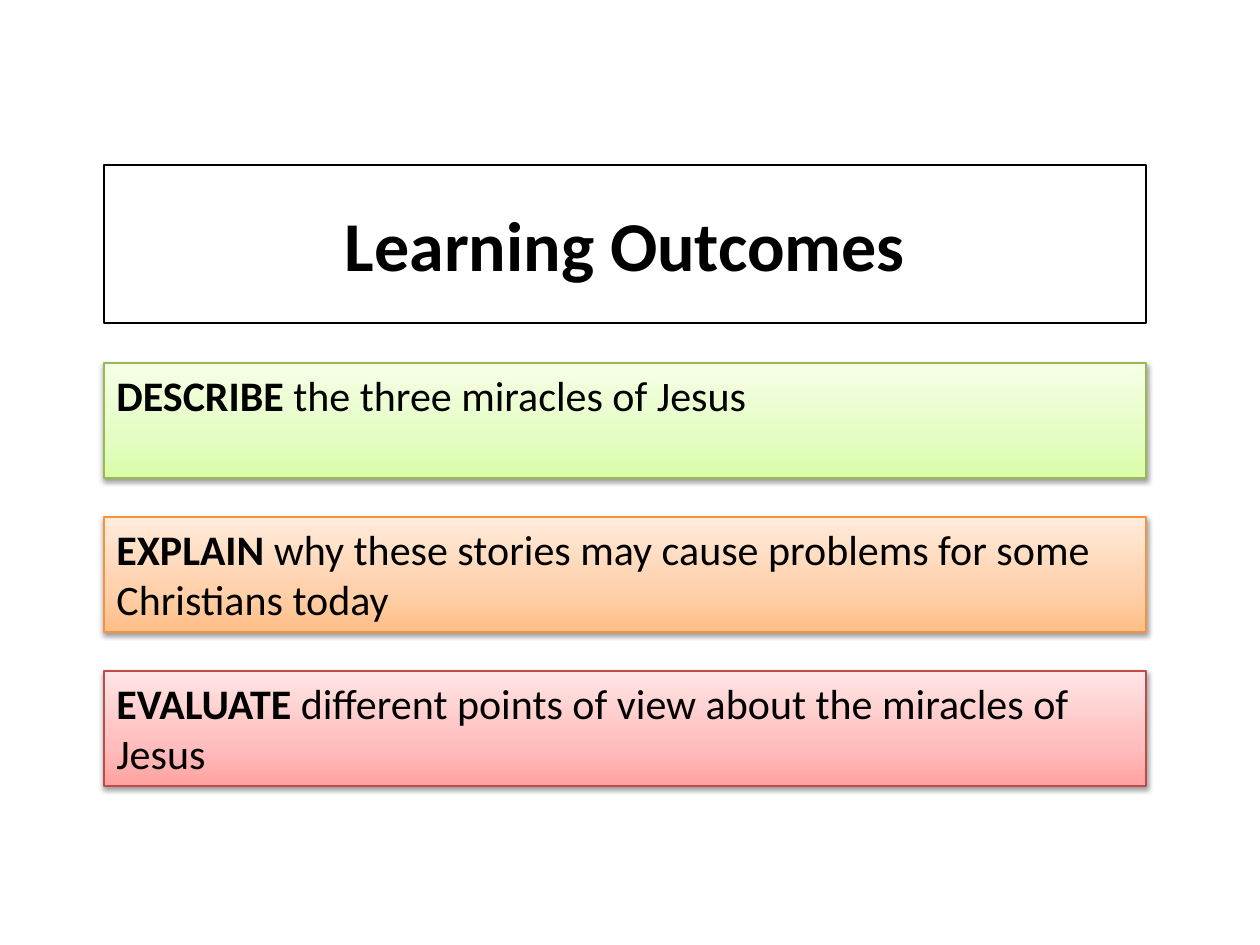
from pptx import Presentation
from pptx.dml.color import RGBColor
from pptx.enum.shapes import MSO_SHAPE as SHAPE
from pptx.enum.text import MSO_ANCHOR as ANCHOR, MSO_AUTO_SIZE as AUTO, PP_ALIGN as ALIGN
from pptx.oxml import parse_xml
from pptx.oxml.ns import nsdecls, qn
from pptx.util import Pt

PX = 914400 // 126
THEME = {
    "font": "Calibri", "title_size": 40, "body_size": 24,
    "text": "000000", "paper": "FFFFFF", "line": 0.75,
    # Border, then gradient stops from bottom to top
    "green": ("98B954", ("DAFDA7", "E4FDC2", "F5FFE6")),
    "orange": ("F69240", ("FFBE86", "FFD0AA", "FFEBDB")),
    "red": ("BE4B48", ("FFA2A1", "FFBEBD", "FFE5E5")),
}
LEFT, WIDTH = 104, 1042
TITLE_TOP, TITLE_HEIGHT = 165, 158
BOX_TOP, BOX_HEIGHT, BOX_STEP = 363, 115, 154
OUTCOMES = [
    ("green", "DESCRIBE ", "the three miracles of Jesus"),
    ("orange", "EXPLAIN ", "why these stories may cause problems for some Christians today"),
    ("red", "EVALUATE ", "different points of view about the miracles of Jesus"),
]


def add_box(top, height, border):
    s = slide.shapes.add_shape(SHAPE.RECTANGLE, LEFT * PX, top * PX, WIDTH * PX, height * PX)
    s.shadow.inherit = False
    s.fill.solid()
    s.fill.fore_color.rgb = RGBColor.from_string(THEME["paper"])
    s.line.color.rgb = RGBColor.from_string(border)
    s.line.width = Pt(THEME["line"])
    s.text_frame.word_wrap = True
    return s


def add_run(p, text, size, bold):
    r = p.add_run()
    r.text = text
    r.font.name = THEME["font"]
    r.font.size = Pt(size)
    r.font.bold = bold
    r.font.color.rgb = RGBColor.from_string(THEME["text"])


prs = Presentation()
prs.slide_width, prs.slide_height = 1260 * PX, 945 * PX
slide = prs.slides.add_slide(prs.slide_layouts[6])

# Title box, white at 70 % opacity
s = add_box(TITLE_TOP, TITLE_HEIGHT, THEME["text"])
color = s._element.spPr.find(qn("a:solidFill"))[0]
color.append(parse_xml(f'<a:alpha {nsdecls("a")} val="70000"/>'))
tf = s.text_frame
tf.vertical_anchor = ANCHOR.MIDDLE
tf.paragraphs[0].alignment = ALIGN.CENTER
add_run(tf.paragraphs[0], "Learning Outcomes", THEME["title_size"], True)

# Outcome boxes
for i, (scheme, verb, outcome) in enumerate(OUTCOMES):
    border, colors = THEME[scheme]
    s = add_box(BOX_TOP + i * BOX_STEP, BOX_HEIGHT, border)
    spPr = s._element.spPr

    # Three-stop gradient running upwards
    stops = "".join(f'<a:gs pos="{pos}000"><a:srgbClr val="{c}"/></a:gs>'
                    for pos, c in zip((0, 35, 100), colors))
    spPr.replace(spPr.find(qn("a:solidFill")), parse_xml(
        f'<a:gradFill {nsdecls("a")} rotWithShape="1"><a:gsLst>{stops}</a:gsLst>'
        '<a:lin ang="16200000" scaled="0"/></a:gradFill>'))

    # Soft shadow below
    spPr.find(qn("a:effectLst")).append(parse_xml(
        f'<a:outerShdw {nsdecls("a")} blurRad="40000" dist="20000" dir="5400000" rotWithShape="0">'
        f'<a:srgbClr val="{THEME["text"]}"><a:alpha val="38000"/></a:srgbClr></a:outerShdw>'))

    # Bold verb, then the outcome
    tf = s.text_frame
    tf.vertical_anchor = ANCHOR.TOP
    tf.auto_size = AUTO.NONE
    p = tf.paragraphs[0]
    p.alignment = ALIGN.LEFT
    add_run(p, verb, THEME["body_size"], True)
    add_run(p, outcome, THEME["body_size"], False)

prs.save("out.pptx")
